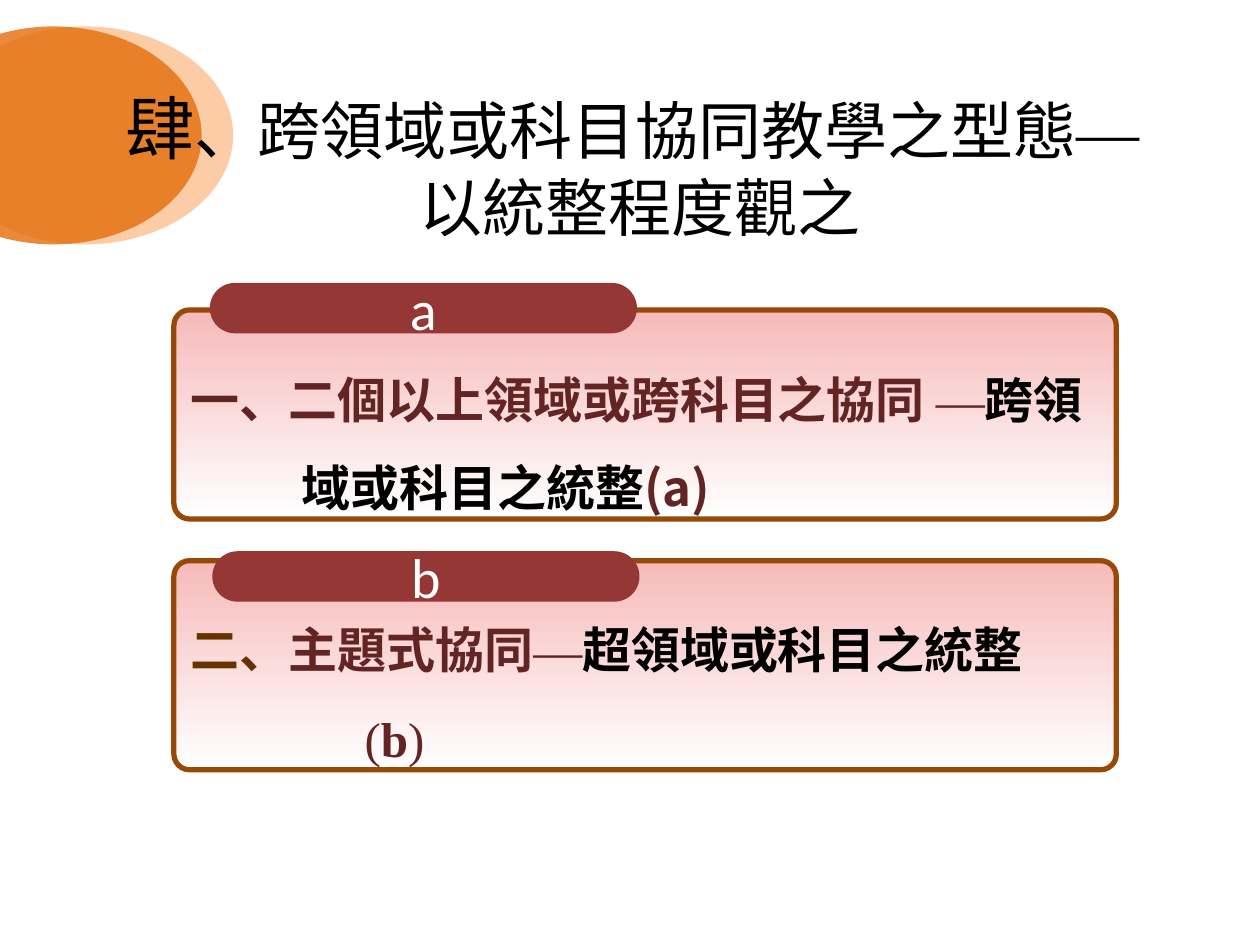
"""Build the slide on types of cross-domain team teaching."""
from lxml.etree import SubElement
from pptx import Presentation
from pptx.dml.color import RGBColor
from pptx.enum.shapes import MSO_SHAPE
from pptx.enum.text import MSO_ANCHOR, PP_ALIGN
from pptx.oxml.ns import qn
from pptx.util import Inches, Pt

COLORS = {
    "black": "000000", "white": "FFFFFF", "peach": "FAC090", "orange": "E46C0A",
    "pink": "F6BABA", "rust": "984807", "red": "953735", "maroon": "632523", "brown": "663300",
}
SANS, SERIF, LABEL = "Noto Sans CJK SC", "Times New Roman", "Calibri"

deck = Presentation()
deck.slide_width, deck.slide_height = Inches(10), Inches(7.5)
page = deck.slides.add_slide(deck.slide_layouts[5])


def add_span(para, text, color, size, name, bold=False, asian=SANS):
    """Append a formatted run and return it."""
    span = para.add_run()
    span.text = text
    for key, value in {"size": Pt(size), "name": name, "bold": bold}.items():
        setattr(span.font, key, value)
    span.font.color.rgb = RGBColor.from_string(COLORS[color])
    SubElement(span.font._element, qn("a:ea"), typeface=asian)
    return span


def add_box(kind, left, top, width, height, fill, line=None, weight=0):
    """Add a shape with a plain or two-colour fill."""
    box = page.shapes.add_shape(kind, *map(Inches, (left, top, width, height)))
    box.shadow.inherit = False
    if isinstance(fill, tuple):
        box.fill.gradient()
        box.fill.gradient_angle = 270
        for stop, color in zip(box.fill.gradient_stops, fill):
            stop.color.rgb = RGBColor.from_string(COLORS[color])
    else:
        box.fill.solid()
        box.fill.fore_color.rgb = RGBColor.from_string(COLORS[fill])
    if line:
        box.line.color.rgb = RGBColor.from_string(COLORS[line])
        box.line.width = Pt(weight)
    else:
        box.line.fill.background()
    return box


for left, color in ((-0.5, "peach"), (-0.75, "orange")):
    oval = add_box(MSO_SHAPE.OVAL, left, 0.21, 2.35, 1.73, color)
    tint = oval.fill._xPr.find(".//" + qn("a:srgbClr"))
    SubElement(tint, qn("a:alpha"), val="80000")

title = page.shapes.title
places = {"left": 0.52, "top": 0.68, "width": 9, "height": 1.25}
for key, value in places.items():
    setattr(title, key, Inches(value))
page.shapes._spTree.append(title._element)
title.text_frame.vertical_anchor = MSO_ANCHOR.MIDDLE
heading = title.text_frame.paragraphs[0]
heading.alignment = PP_ALIGN.CENTER
lines = (("肆", 39.6, SANS), ("、跨領域或科目協同教學之型態", 36, SANS), ("—", 36, SERIF))
spans = [add_span(heading, text, "black", size, SERIF, asian=asian) for text, size, asian in lines]
heading.add_line_break()
spans.append(add_span(heading, " 以統整程度觀之", "black", 36, SERIF))
for span in spans:
    effects = span.font._element.makeelement(qn("a:effectLst"))
    span.font._element.find(qn("a:solidFill")).addnext(effects)
    shadow = SubElement(effects, qn("a:outerShdw"), blurRad="38100", dist="38100", dir="2700000")
    shade = SubElement(shadow, qn("a:srgbClr"), val=COLORS["black"])
    SubElement(shade, qn("a:alpha"), val="43000")

panels = (
    ("a", 2.46, 1.67, 2.25, 0.88, (
        ("一、二個以上領域或跨科目之協同 ", "maroon", SANS, True),
        ("—", "maroon", SERIF, False),
        ("跨領域或科目之統整", "black", SANS, True),
        ("(a)", "maroon", SANS, True))),
    ("b", 4.45, 1.69, 4.38, 1.38, (
        ("二、", "brown", SERIF, True),
        ("主題式協同", "maroon", SERIF, True),
        ("—", "maroon", SERIF, False),
        ("超領域或科目之統整\v", "black", SERIF, True),
        ("(", "maroon", SERIF, False),
        ("b", "maroon", SERIF, True),
        (")", "maroon", SERIF, False))),
)
for letter, top, tab_left, tab_top, indent, pieces in panels:
    panel = add_box(MSO_SHAPE.ROUNDED_RECTANGLE, 1.38, top, 7.48, 1.66, ("pink", "white"), "rust", 3)
    panel.adjustments[0] = 0.075
    frame = panel.text_frame
    layout = {"word_wrap": True, "vertical_anchor": MSO_ANCHOR.TOP, "margin_left": Inches(0.1),
              "margin_top": Inches(0.2), "margin_right": Inches(0.1), "margin_bottom": Inches(0.05)}
    for key, value in layout.items():
        setattr(frame, key, value)
    para = frame.paragraphs[0]
    para.alignment, para.line_spacing = PP_ALIGN.LEFT, 1.5
    para._p.get_or_add_pPr().set("marL", str(Inches(indent)))
    para._p.get_or_add_pPr().set("indent", str(-Inches(indent)))
    for text, color, name, bold in pieces:
        asian = SERIF if text == "—" else SANS
        words = text.rstrip("\v")
        add_span(para, words, color, 28, name, bold, asian)
        if words != text:
            para.add_line_break()

    tab = add_box(MSO_SHAPE.ROUNDED_RECTANGLE, tab_left, tab_top, 3.38, 0.39, "red", "red", 0.75)
    tab.adjustments[0] = 0.5
    tab.text_frame.word_wrap = False
    tab.text_frame.vertical_anchor = MSO_ANCHOR.MIDDLE
    para = tab.text_frame.paragraphs[0]
    para.alignment = PP_ALIGN.CENTER
    add_span(para, letter, "white", 32, LABEL)

deck.save("out.pptx")
